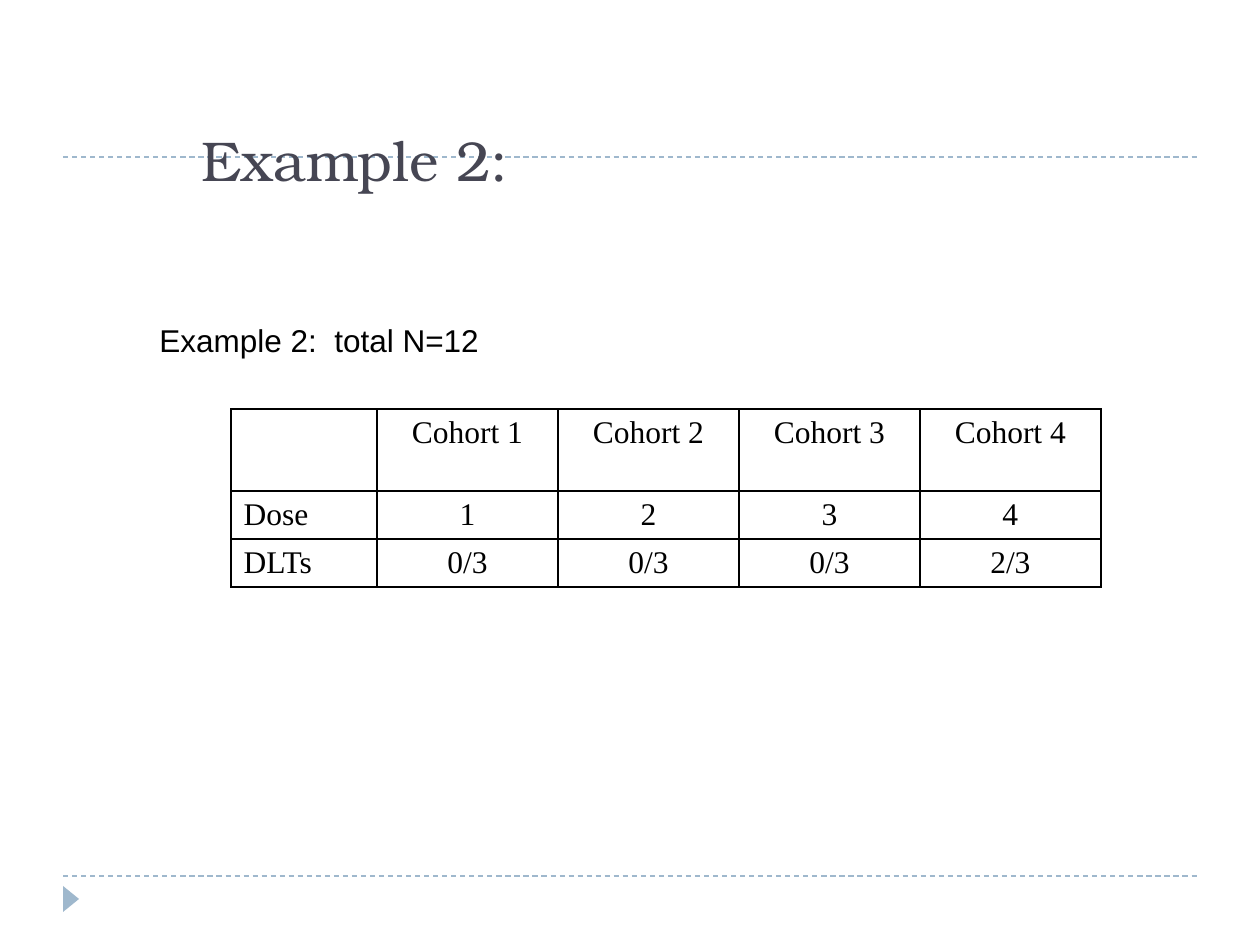
from dataclasses import dataclass

from lxml.etree import SubElement
from pptx import Presentation
from pptx.dml.color import RGBColor as Rgb
from pptx.enum.dml import MSO_LINE as Dash
from pptx.enum.shapes import MSO_CONNECTOR as Link, MSO_SHAPE as Shape
from pptx.enum.text import MSO_ANCHOR as Anchor, PP_ALIGN as Align
from pptx.oxml.ns import qn
from pptx.util import Emu, Pt

SCALE = 914400 / 126


def px(n):
    return Emu(round(n * SCALE))


@dataclass(frozen=True)
class Theme:
    accent: str = "9FB8CD"
    head: str = "464653"
    ink: str = "000000"
    head_size: int = 32
    text_size: int = 18
    head_font: str = "TeX Gyre Bonum"
    text_font: str = "Arial"
    cell_font: str = "Times New Roman"


class Deck:
    def __init__(self, theme):
        self.theme = theme
        self.prs = Presentation()
        self.prs.slide_width, self.prs.slide_height = px(1260), px(945)
        self.slide = self.prs.slides.add_slide(self.prs.slide_layouts[5])
        self.shapes = self.slide.shapes

    def style(self, para, font, size, color, align=Align.LEFT):
        para.alignment = align
        for run in para.runs:
            run.font.name = font
            run.font.size = Pt(size)
            run.font.color.rgb = Rgb.from_string(color)

    def rule(self, left, right, y):
        line = self.shapes.add_connector(
            Link.STRAIGHT, px(left), px(y), px(right), px(y))
        line.line.color.rgb = Rgb.from_string(self.theme.accent)
        line.line.width = Pt(0.75)
        line.line.dash_style = Dash.DASH
        SubElement(line.element.spPr, qn("a:effectLst"))

    def marker(self, *box):
        mark = self.shapes.add_shape(
            Shape.ISOSCELES_TRIANGLE, *map(px, box))
        mark.rotation = 90
        mark.shadow.inherit = False
        mark.fill.solid()
        mark.fill.fore_color.rgb = Rgb.from_string(self.theme.accent)
        mark.line.fill.background()

    def title(self, text, *box):
        """Fill the title placeholder and bring it in front of the rules."""
        title = self.shapes.title
        title.left, title.top, title.width, title.height = map(px, box)
        frame = title.text_frame
        frame.text = text
        frame.vertical_anchor = Anchor.BOTTOM
        t = self.theme
        self.style(frame.paragraphs[0], t.head_font, t.head_size, t.head)
        title.element.getparent().append(title.element)

    def label(self, text, *box):
        frame = self.shapes.add_textbox(*map(px, box)).text_frame
        frame.word_wrap = False
        frame.text = text
        t = self.theme
        self.style(frame.paragraphs[0], t.text_font, t.text_size, t.ink)

    def border(self, cell):
        props = cell._tc.get_or_add_tcPr()
        for n, side in enumerate(("lnL", "lnR", "lnT", "lnB")):
            line = props.makeelement(qn(f"a:{side}"), {"w": str(Pt(1))})
            fill = SubElement(line, qn("a:solidFill"))
            SubElement(fill, qn("a:srgbClr"), val=self.theme.ink)
            props.insert(n, line)

    def table(self, rows, left, top, widths, heights):
        grid = self.shapes.add_table(
            len(rows), len(widths), px(left), px(top),
            px(sum(widths)), px(sum(heights))).table
        grid.first_row = grid.horz_banding = False
        for col, width in zip(grid.columns, widths):
            col.width = px(width)
        t = self.theme
        for row, height, texts in zip(grid.rows, heights, rows):
            row.height = px(height)
            for n, (cell, text) in enumerate(zip(row.cells, texts)):
                cell.text = text
                cell.fill.background()
                self.border(cell)
                self.style(cell.text_frame.paragraphs[0], t.cell_font,
                           t.text_size, t.ink,
                           Align.CENTER if n else Align.LEFT)


def main():
    deck = Deck(Theme())
    for y in (876, 157):
        deck.rule(63, 1197, y)
    deck.marker(58, 891, 26, 16)
    deck.title("Example 2:", 189, 42, 1008, 157)
    cohorts = range(1, 5)
    rows = [
        ["", *(f"Cohort {n}" for n in cohorts)],
        ["Dose", *map(str, cohorts)],
        ["DLTs", "0/3", "0/3", "0/3", "2/3"],
    ]
    deck.table(rows, 231, 409, [146] + [181] * 4, [82, 48, 48])
    deck.label("Example 2:  total N=12", 147, 315, 401, 50)
    deck.prs.save("out.pptx")


if __name__ == "__main__":
    main()
